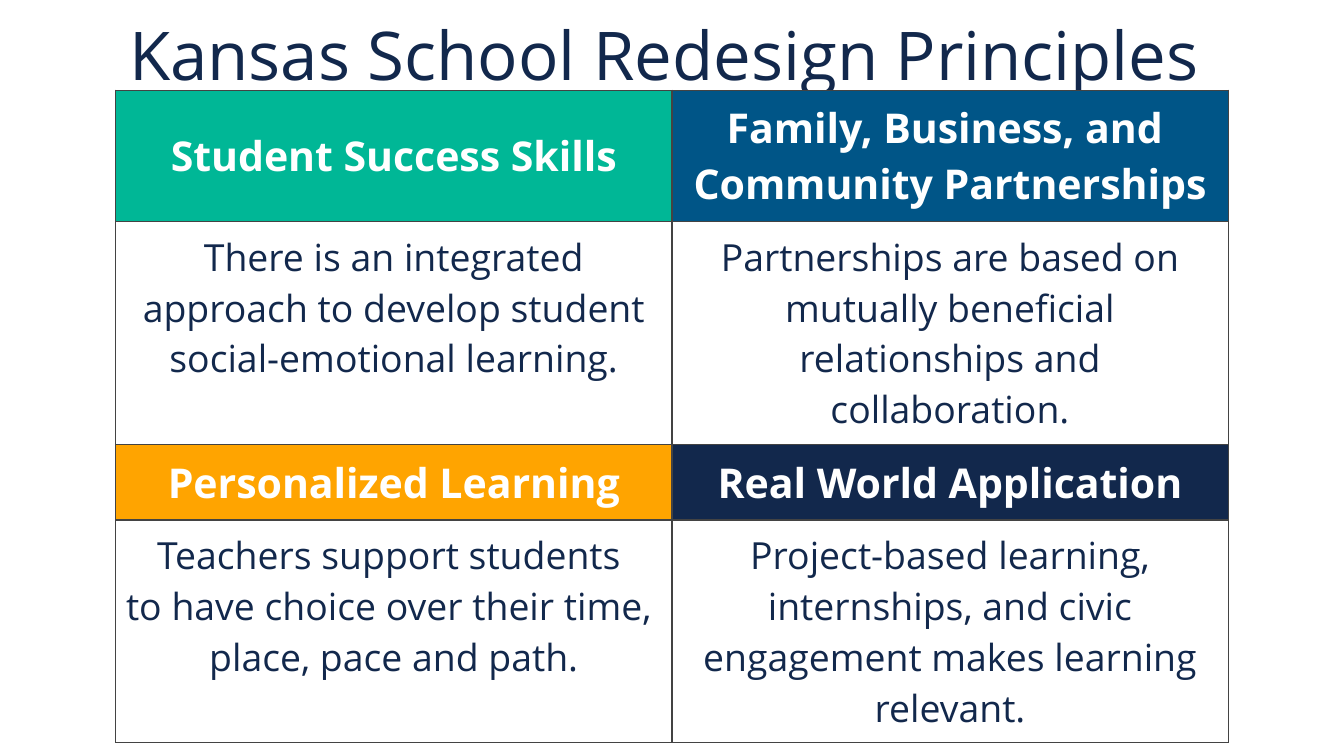
from lxml import etree
from pptx import Presentation
from pptx.dml.color import RGBColor
from pptx.enum.text import MSO_ANCHOR, MSO_AUTO_SIZE, PP_ALIGN
from pptx.oxml.ns import qn
from pptx.util import Pt

MIDDLE, TOP = MSO_ANCHOR.MIDDLE, MSO_ANCHOR.TOP
LEFT, CENTER = PP_ALIGN.LEFT, PP_ALIGN.CENTER
NO_AUTOFIT = MSO_AUTO_SIZE.NONE
TITLE_ONLY = 5

FONT = "Open Sans"
NAVY, WHITE, BORDER = "12284C", "FFFFFF", "434343"
MARGIN, TABLE_TOP, TABLE_WIDTH = 62, 48.3, 596
HEADING_HEIGHTS, BODY_HEIGHT = (68.4, 37.4), 101.5
CELL_INSET = 5.2

# Each row of principles: (heading, heading fill, description)
PRINCIPLES = [
    [
        ("Student Success Skills", "00B796",
         "There is an integrated approach to develop student "
         "social-emotional learning."),
        ("Family, Business, and \nCommunity Partnerships", "005587",
         "Partnerships are based on mutually beneficial relationships "
         "and collaboration."),
    ],
    [
        ("Personalized Learning", "FFA400",
         "Teachers support students \nto have choice over their time, \n"
         "place, pace and path."),
        ("Real World Application", NAVY,
         "Project-based learning, internships, and civic engagement "
         "makes learning relevant."),
    ],
]


def color(value):
    return RGBColor.from_string(value)


def format_text(frame, size, text_color, align, bold=False):
    for para in frame.paragraphs:
        para.alignment = align
        para.font.name = FONT
        para.font.size = Pt(size)
        para.font.bold = bold
        para.font.color.rgb = color(text_color)


def add_title(page, text):
    title = page.shapes.title
    title.left, title.top = Pt(MARGIN), Pt(15.1)
    title.width, title.height = Pt(TABLE_WIDTH), Pt(33.1)
    frame = title.text_frame
    frame.text = text
    frame.word_wrap = True
    frame.auto_size = NO_AUTOFIT
    frame.vertical_anchor = MIDDLE
    frame.margin_left = frame.margin_right = Pt(7.2)
    frame.margin_top = frame.margin_bottom = Pt(7.2)
    format_text(frame, 36, NAVY, LEFT)
    frame.paragraphs[0].line_spacing = 0.9


def add_borders(cell):
    properties = cell._tc.get_or_add_tcPr()
    for side in ("a:lnL", "a:lnR", "a:lnT", "a:lnB"):
        line = etree.SubElement(properties, qn(side), w=str(Pt(0.75)))
        fill = etree.SubElement(line, qn("a:solidFill"))
        etree.SubElement(fill, qn("a:srgbClr"), val=BORDER)


def fill_cell(cell, text, size, text_color, anchor, bold=False):
    cell.text = text
    cell.vertical_anchor = anchor
    cell.margin_left = cell.margin_right = Pt(CELL_INSET)
    cell.margin_top = cell.margin_bottom = Pt(CELL_INSET)
    format_text(cell.text_frame, size, text_color, CENTER, bold)
    add_borders(cell)


def add_principles(page):
    """Add the table, with a heading row above each row of descriptions."""
    height = sum(HEADING_HEIGHTS) + 2 * BODY_HEIGHT
    table = page.shapes.add_table(
        4, 2, Pt(MARGIN), Pt(TABLE_TOP), Pt(TABLE_WIDTH), Pt(height)).table
    table.first_row = table.horz_banding = False
    for index, principles in enumerate(PRINCIPLES):
        heading_row, body_row = 2 * index, 2 * index + 1
        table.rows[heading_row].height = Pt(HEADING_HEIGHTS[index])
        table.rows[body_row].height = Pt(BODY_HEIGHT)
        for column, (heading, fill, description) in enumerate(principles):
            cell = table.cell(heading_row, column)
            fill_cell(cell, heading, 22, WHITE, MIDDLE, bold=True)
            cell.fill.solid()
            cell.fill.fore_color.rgb = color(fill)
            cell = table.cell(body_row, column)
            fill_cell(cell, description, 20, NAVY, TOP)
            cell.fill.background()


def main():
    deck = Presentation()
    deck.slide_width, deck.slide_height = Pt(720), Pt(405)
    page = deck.slides.add_slide(deck.slide_layouts[TITLE_ONLY])
    add_title(page, "Kansas School Redesign Principles")
    add_principles(page)
    deck.save("out.pptx")


if __name__ == "__main__":
    main()
